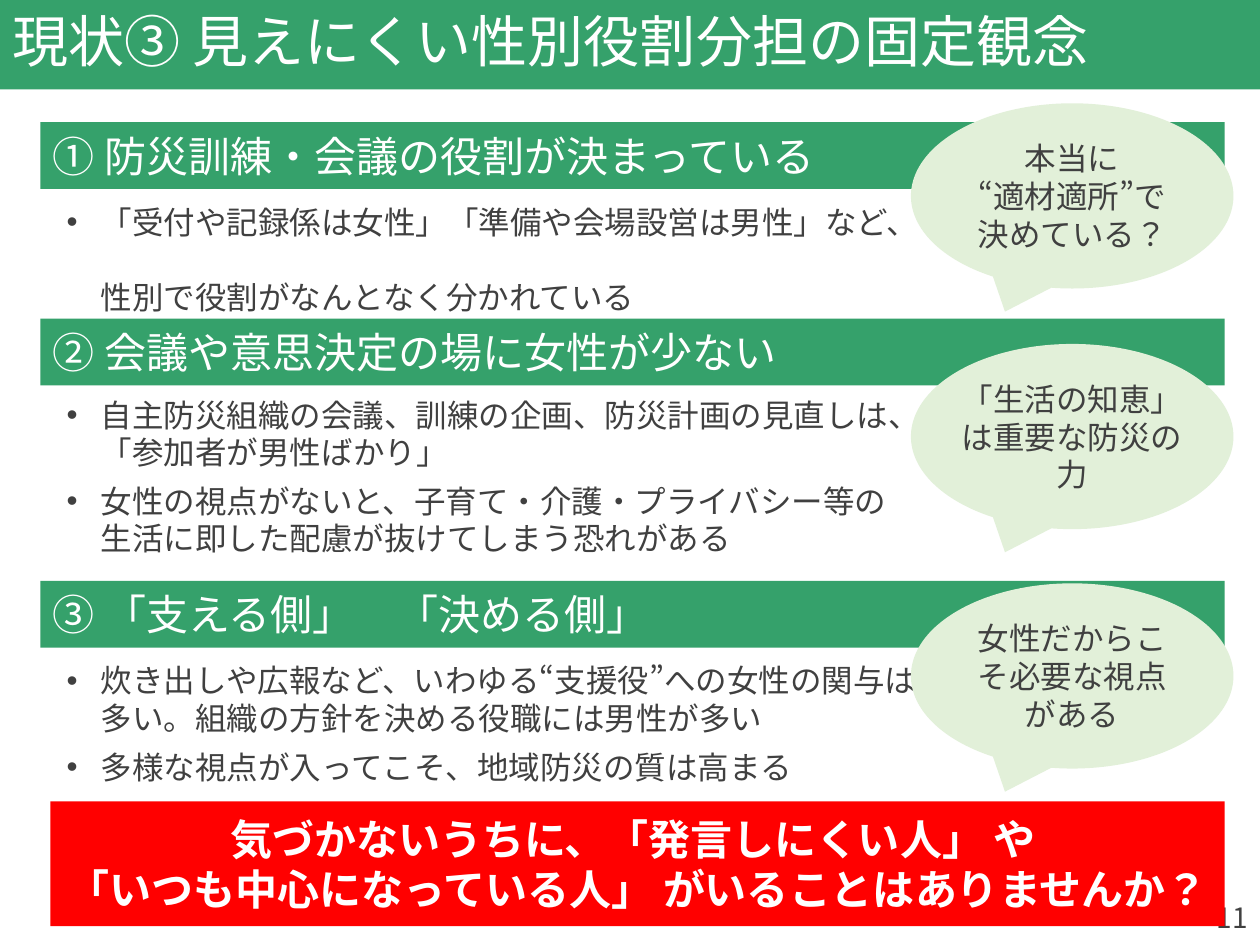
from lxml.etree import SubElement
from pptx import Presentation
from pptx.dml.color import RGBColor
from pptx.enum.lang import MSO_LANGUAGE_ID as Language
from pptx.enum.shapes import MSO_SHAPE as Shape
from pptx.enum.text import MSO_ANCHOR as Anchor, PP_ALIGN as Align
from pptx.oxml.ns import qn
from pptx.util import Inches, Pt

GREEN = RGBColor(0x35, 0xA1, 0x6B)
PALE_GREEN = RGBColor(0xE2, 0xF0, 0xD9)
RED = RGBColor(0xFF, 0x00, 0x00)
WHITE = RGBColor(0xFF, 0xFF, 0xFF)
GRAY = RGBColor(0x40, 0x40, 0x40)
FONT = "Noto Sans CJK JP"

SECTIONS = [
    (0.97, "① 防災訓練・会議の役割が決まっている", 1.56, 7.02, 1.06,
     ["「受付や記録係は女性」「準備や会場設営は男性」など、\v性別で役割がなんとなく分かれている"]),
    (2.53, "② 会議や意思決定の場に女性が少ない", 3.09, 7.02, 1.75,
     ["自主防災組織の会議、訓練の企画、防災計画の見直しは、「参加者が男性ばかり」",
      "女性の視点がないと、子育て・介護・プライバシー等の生活に即した配慮が抜けてしまう恐れがある"]),
    (4.61, "③ 「支える側」　「決める側」", 5.2, 7.25, 1.45,
     ["炊き出しや広報など、いわゆる“支援役”への女性の関与は\v多い。組織の方針を決める役職には男性が多い",
      "多様な視点が入ってこそ、地域防災の質は高まる"]),
]
CALLOUTS = [
    (0.82, ["本当に", "“適材適所”で決めている？"], 0.1),
    (2.73, ["「生活の知恵」は重要な防災の力"], 0),
    (4.63, ["女性だからこそ必要な視点がある"], 0.1),
]
BANNER = ["気づかないうちに、「発言しにくい人」 や ",
          "「いつも中心になっている人」 がいることはありませんか？"]


def write(frame, lines, size, color, align=Align.LEFT, bold=False):
    frame.word_wrap = True
    for index, line in enumerate(lines):
        paragraph = frame.add_paragraph() if index else frame.paragraphs[0]
        paragraph.text = line
        paragraph.alignment = align
        font = paragraph.font
        font.name, font.size, font.bold = FONT, Pt(size), bold
        font.color.rgb = color
        defaults = paragraph._p.pPr.find(qn("a:defRPr"))
        SubElement(defaults, qn("a:ea"), typeface=FONT)
        for run in paragraph.runs:
            run.font.language_id = Language.JAPANESE


def add_panel(slide, kind, box, fill, lines, size, color, align=Align.LEFT, bold=False):
    panel = slide.shapes.add_shape(kind, *map(Inches, box))
    panel.shadow.inherit = False
    panel.fill.solid()
    panel.fill.fore_color.rgb = fill
    panel.line.fill.background()
    panel.text_frame.vertical_anchor = Anchor.MIDDLE
    write(panel.text_frame, lines, size, color, align, bold)
    return panel


def add_text(slide, box, lines, size, align=Align.LEFT):
    frame = slide.shapes.add_textbox(*map(Inches, box)).text_frame
    write(frame, lines, size, GRAY, align)
    return frame


def add_bullets(slide, box, lines):
    for paragraph in add_text(slide, box, lines, 18).paragraphs:
        paragraph.space_after = Pt(6)
        properties = paragraph._p.pPr
        properties.set("marL", str(Inches(0.38)))
        properties.set("indent", str(Inches(-0.27)))
        defaults = properties.find(qn("a:defRPr"))
        bullet_font = SubElement(properties, qn("a:buFont"), typeface="Arial")
        bullet = SubElement(properties, qn("a:buChar"), char="•")
        defaults.addprevious(bullet_font)
        defaults.addprevious(bullet)


def add_callout(slide, top, lines, side_inset):
    callout = add_panel(slide, Shape.OVAL_CALLOUT, (7.23, top, 2.56, 1.47),
                        PALE_GREEN, lines, 18, GRAY, Align.CENTER)
    frame = callout.text_frame
    frame.margin_left = frame.margin_right = Inches(side_inset)


def main():
    deck = Presentation()
    deck.slide_width, deck.slide_height = Inches(10), Inches(7.5)
    slide = deck.slides.add_slide(deck.slide_layouts[6])

    title = add_panel(slide, Shape.RECTANGLE, (0, 0, 10, 0.71), GREEN,
                      ["現状③ 見えにくい性別役割分担の固定観念"], 32, WHITE)
    title.text_frame.paragraphs[0].line_spacing = 0.9
    add_text(slide, (7.75, 7.1, 2.25, 0.4), ["11"], 16, Align.RIGHT)

    for bar_top, heading, top, width, height, points in SECTIONS:
        add_panel(slide, Shape.RECTANGLE, (0.32, bar_top, 9.4, 0.53),
                  GREEN, [heading], 24, WHITE)
        add_bullets(slide, (0.32, top, width, height), points)
    for top, lines, side_inset in CALLOUTS:
        add_callout(slide, top, lines, side_inset)

    banner = add_panel(slide, Shape.PENTAGON, (0.4, 6.36, 9.32, 0.99), RED,
                       BANNER, 24, WHITE, Align.CENTER, bold=True)
    banner.adjustments[0] = 0
    deck.save("out.pptx")


if __name__ == "__main__":
    main()
